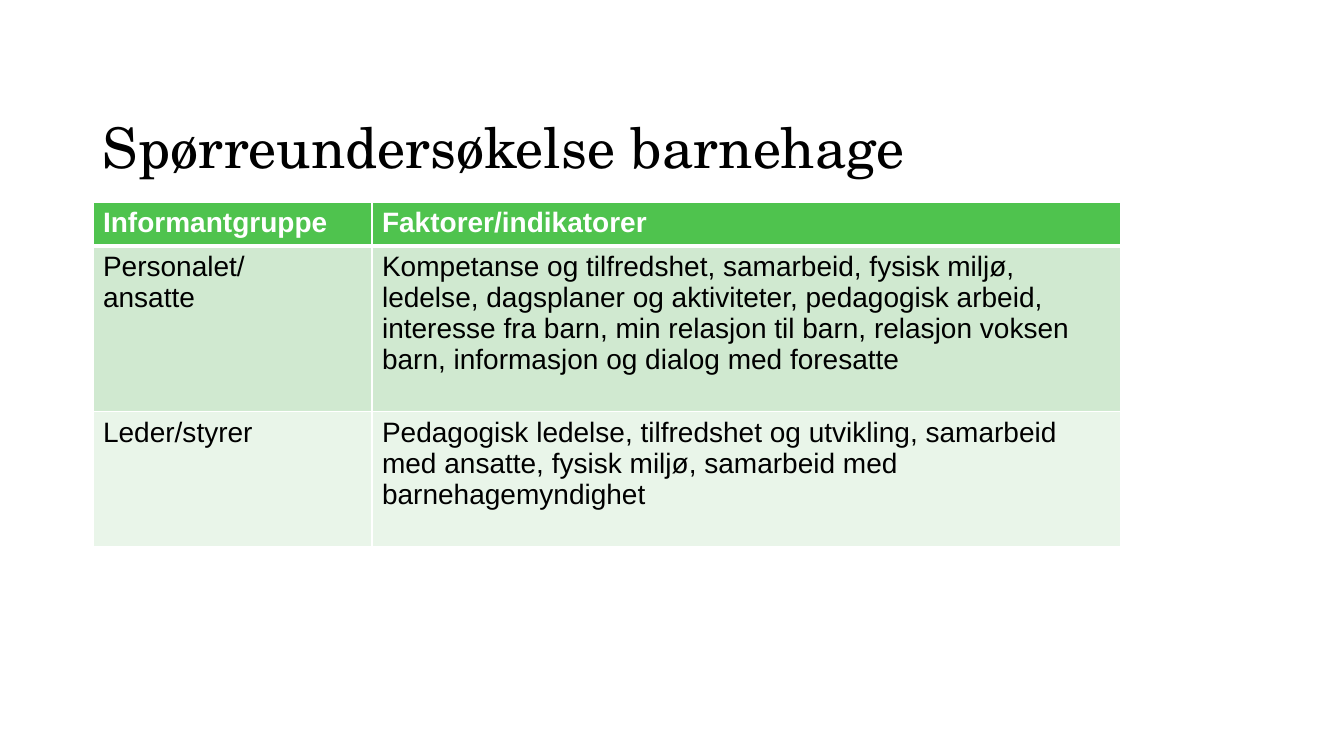
import pptx
import pptx.util
import pptx.dml.color
import pptx.enum.text
import pptx.oxml
import pptx.oxml.ns

TITLE = "Spørreundersøkelse barnehage"
ROWS = [
    ("Informantgruppe", "Faktorer/indikatorer"),
    ("Personalet/\nansatte",
     "Kompetanse og tilfredshet, samarbeid, fysisk miljø, ledelse, dagsplaner "
     "og aktiviteter, pedagogisk arbeid, interesse fra barn, min relasjon til "
     "barn, relasjon voksen barn, informasjon og dialog med foresatte"),
    ("Leder/styrer",
     "Pedagogisk ledelse, tilfredshet og utvikling, samarbeid med ansatte, "
     "fysisk miljø, samarbeid med barnehagemyndighet"),
]
THEME = {
    "title_font": "TeX Gyre Schola", "title_size": 40,
    "body_font": "Arial", "body_size": 20,
    "text": "000000", "header_text": "FFFFFF", "border": "FFFFFF",
    "row_fills": ("4FC34E", "D0E9D0", "E9F5E9"),
}
SLIDE_W, SLIDE_H = 1344, 756
LEFT = 93
TITLE_TOP, TITLE_H = 40, 146
TABLE_TOP = 202
COL_WIDTHS = (279, 749)
ROW_HEIGHTS = (40, 166, 135)
THIN, THICK = 1, 3


def px(n):
    return pptx.util.Emu(round(n * 914400 / 100.8))


def style(p, font, size, color, bold=False):
    p.font.name = font
    p.font.size = pptx.util.Pt(size)
    p.font.bold = bold
    p.font.color.rgb = pptx.dml.color.RGBColor.from_string(color)


def add_borders(cell, top, bottom):
    """Border all four sides; top and bottom are widths in points."""
    tc_pr = cell._tc.get_or_add_tcPr()
    for side, width in (("L", THIN), ("R", THIN), ("T", top), ("B", bottom)):
        tc_pr.append(pptx.oxml.parse_xml(
            f'<a:ln{side} {pptx.oxml.ns.nsdecls("a")} w="{pptx.util.Pt(width)}">'
            f'<a:solidFill><a:srgbClr val="{THEME["border"]}"/></a:solidFill>'
            f'</a:ln{side}>'))


def add_title(slide):
    box = slide.shapes.add_textbox(px(LEFT), px(TITLE_TOP), px(sum(COL_WIDTHS)), px(TITLE_H))
    tf = box.text_frame
    tf.word_wrap = True
    tf.vertical_anchor = pptx.enum.text.MSO_ANCHOR.BOTTOM
    p = tf.paragraphs[0]
    p.text = TITLE
    p.line_spacing = 0.9
    style(p, THEME["title_font"], THEME["title_size"], THEME["text"])


def add_informant_table(slide):
    table = slide.shapes.add_table(
        len(ROWS), len(COL_WIDTHS), px(LEFT), px(TABLE_TOP),
        px(sum(COL_WIDTHS)), px(sum(ROW_HEIGHTS))).table
    table.horz_banding = False
    for column, width in zip(table.columns, COL_WIDTHS):
        column.width = px(width)
    for i, (row, height, texts, fill) in enumerate(
            zip(table.rows, ROW_HEIGHTS, ROWS, THEME["row_fills"])):
        row.height = px(height)
        header = i == 0
        for cell, text in zip(row.cells, texts):
            add_borders(cell, THICK if i == 1 else THIN, THICK if header else THIN)
            cell.fill.solid()
            cell.fill.fore_color.rgb = pptx.dml.color.RGBColor.from_string(fill)
            p = cell.text_frame.paragraphs[0]
            p.text = text
            style(p, THEME["body_font"], THEME["body_size"],
                  THEME["header_text" if header else "text"], header)


def main():
    prs = pptx.Presentation()
    prs.slide_width, prs.slide_height = px(SLIDE_W), px(SLIDE_H)
    slide = prs.slides.add_slide(prs.slide_layouts[6])
    add_title(slide)
    add_informant_table(slide)
    prs.save("out.pptx")


if __name__ == "__main__":
    main()
